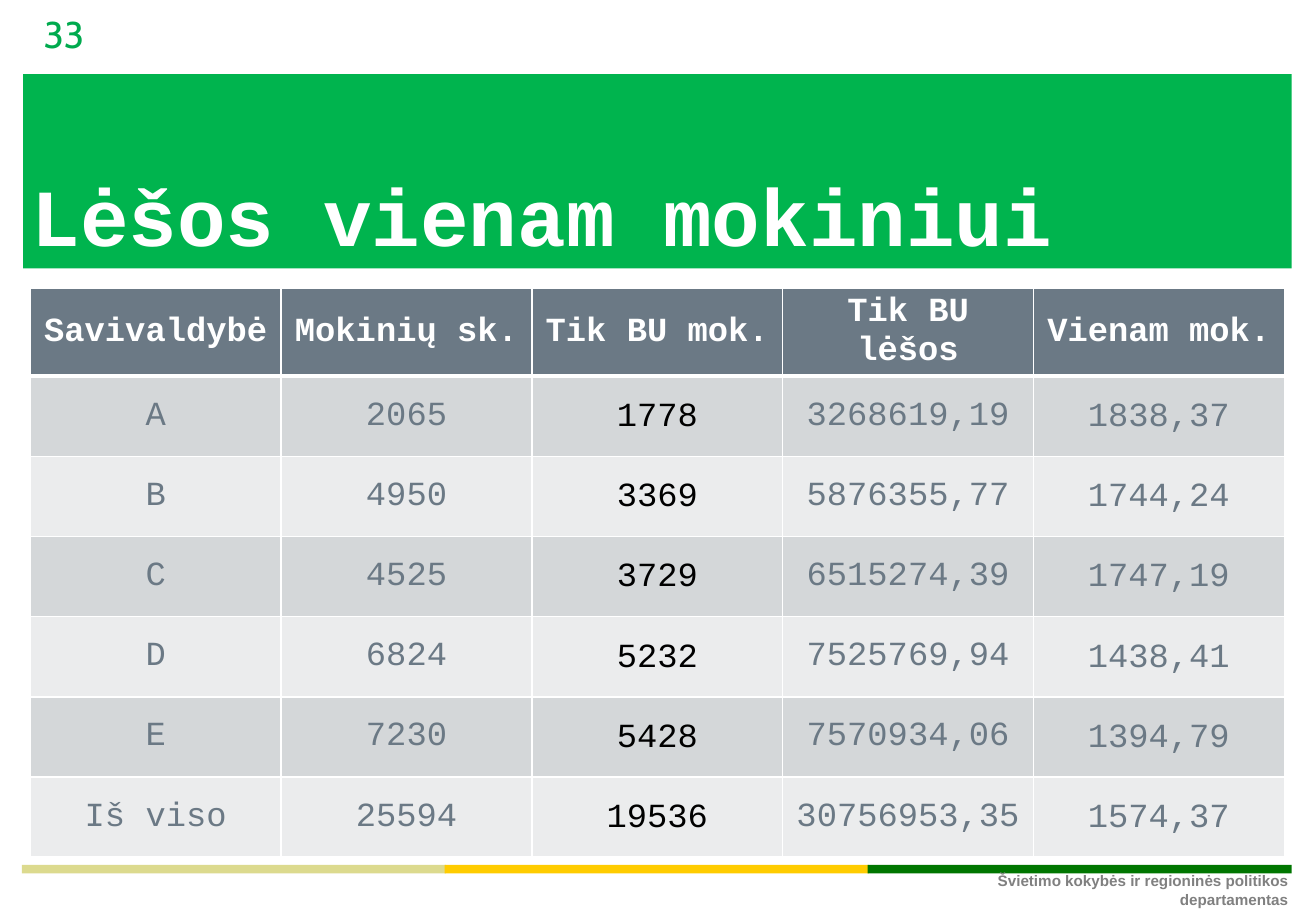
from dataclasses import dataclass

from lxml.etree import SubElement
from pptx import Presentation
from pptx.dml.color import RGBColor
from pptx.enum.shapes import MSO_SHAPE as Preset
from pptx.enum.text import MSO_ANCHOR as Anchor, PP_ALIGN as Align
from pptx.oxml.ns import qn
from pptx.slide import Slide
from pptx.table import _Cell as Cell
from pptx.text.text import _Paragraph as Paragraph
from pptx.util import Emu, Pt

EMU_PER_PX = 9144  # 100 px to the inch

COLORS = {
    "white": "FFFFFF", "black": "000000", "banner": "00B44E", "number": "00AA4E",
    "footer": "808080", "slate": "6B7985", "odd_row": "D4D7D9", "even_row": "EBECED",
    "sand": "DCDA8E", "yellow": "FFCC00", "dark_green": "007600",
}

ROWS = [
    ["Savivaldybė", "Mokinių sk.", "Tik BU mok.", "Tik BU lėšos", "Vienam mok."],
    ["A", "2065", "1778", "3268619,19", "1838,37"],
    ["B", "4950", "3369", "5876355,77", "1744,24"],
    ["C", "4525", "3729", "6515274,39", "1747,19"],
    ["D", "6824", "5232", "7525769,94", "1438,41"],
    ["E", "7230", "5428", "7570934,06", "1394,79"],
    ["Iš viso", "25594", "19536", "30756953,35", "1574,37"],
]
BU_PUPILS_COLUMN = 2
LOOSE_COLUMNS = (2, 4)
LOOSE_SPACING = 1.07


@dataclass(frozen=True)
class Box:
    left: int
    top: int
    width: int
    height: int

    def emu(self) -> tuple[Emu, Emu, Emu, Emu]:
        return px(self.left), px(self.top), px(self.width), px(self.height)


@dataclass(frozen=True)
class Bar:
    box: Box
    color: str


@dataclass(frozen=True)
class TextStyle:
    font: str
    size: int
    color: str
    bold: bool = False
    align: Align = Align.LEFT
    spacing: float = 1.0


@dataclass(frozen=True)
class Label:
    text: str
    box: Box
    style: TextStyle
    anchor: Anchor
    margins: tuple[int, int] = (7, 4)


STRIPE_COLORS = ("sand", "yellow", "dark_green")
BARS = [Bar(Box(19, 61, 1044, 160), "banner")] + [
    Bar(Box(18 + 348 * index, 712, 349, 7), color)
    for index, color in enumerate(STRIPE_COLORS)
]
LABELS = [
    Label("Švietimo kokybės ir regioninės politikos departamentas",
          Box(760, 712, 307, 22),
          TextStyle("Arial", 9, "footer", True, Align.RIGHT, LOOSE_SPACING), Anchor.TOP),
    Label("33", Box(29, 11, 70, 33), TextStyle("Cabin", 22, "number"), Anchor.MIDDLE),
    Label("Lėšos vienam mokiniui", Box(26, 64, 1031, 152),
          TextStyle("Courier New", 48, "white", True), Anchor.BOTTOM, (0, 0)),
]
TABLE_BOX = Box(25, 237, 1032, 462)


def px(length: int) -> Emu:
    return Emu(length * EMU_PER_PX)


def rgb(name: str) -> RGBColor:
    return RGBColor.from_string(COLORS[name])


def style_paragraph(paragraph: Paragraph, style: TextStyle) -> None:
    paragraph.alignment = style.align
    paragraph.line_spacing = style.spacing
    font = paragraph.font
    font.name, font.size, font.bold = style.font, Pt(style.size), style.bold
    font.color.rgb = rgb(style.color)


def draw_bar(slide: Slide, bar: Bar) -> None:
    shape = slide.shapes.add_shape(Preset.RECTANGLE, *bar.box.emu())
    shape.shadow.inherit = False
    shape.fill.solid()
    shape.fill.fore_color.rgb = rgb(bar.color)
    shape.line.fill.background()


def draw_label(slide: Slide, label: Label) -> None:
    frame = slide.shapes.add_textbox(*label.box.emu()).text_frame
    frame.word_wrap = True
    frame.vertical_anchor = label.anchor
    frame.margin_left = frame.margin_right = px(label.margins[0])
    frame.margin_top = frame.margin_bottom = px(label.margins[1])
    paragraph = frame.paragraphs[0]
    paragraph.text = label.text
    style_paragraph(paragraph, label.style)


def add_borders(cell: Cell, top: int, bottom: int) -> None:
    """Draw white borders, with widths in points; call before filling the cell."""
    properties = cell._tc.get_or_add_tcPr()
    for side, width in (("L", 1), ("R", 1), ("T", top), ("B", bottom)):
        line = SubElement(properties, qn(f"a:ln{side}"), w=str(Pt(width)))
        fill = SubElement(line, qn("a:solidFill"))
        SubElement(fill, qn("a:srgbClr"), val=COLORS["white"])


def cell_look(row: int, column: int) -> tuple[str, TextStyle]:
    """Return the fill colour and the text style of a cell."""
    if row == 0:
        return "slate", TextStyle("Courier New", 20, "white", True, Align.CENTER)
    fill = "odd_row" if row % 2 else "even_row"
    color = "black" if column == BU_PUPILS_COLUMN else "slate"
    spacing = LOOSE_SPACING if column in LOOSE_COLUMNS else 1.0
    return fill, TextStyle("Courier New", 20, color, False, Align.CENTER, spacing)


def draw_cell(cell: Cell, text: str, row: int, column: int) -> None:
    fill, style = cell_look(row, column)
    add_borders(cell, top=3 if row == 1 else 1, bottom=3 if row == 0 else 1)
    cell.fill.solid()
    cell.fill.fore_color.rgb = rgb(fill)
    cell.vertical_anchor = Anchor.MIDDLE
    cell.margin_top = cell.margin_bottom = px(3 if row == 0 else 0)
    if row > 0 and column > 0:
        cell.margin_left = cell.margin_right = px(7 if column in LOOSE_COLUMNS else 0)
    paragraph = cell.text_frame.paragraphs[0]
    paragraph.text = text
    style_paragraph(paragraph, style)


def draw_table(slide: Slide) -> None:
    frame = slide.shapes.add_table(len(ROWS), len(ROWS[0]), *TABLE_BOX.emu())
    table = frame.table
    table.horz_banding = False
    for row, texts in enumerate(ROWS):
        for column, text in enumerate(texts):
            draw_cell(table.cell(row, column), text, row, column)


def main() -> None:
    presentation = Presentation()
    presentation.slide_width, presentation.slide_height = px(1083), px(750)
    slide = presentation.slides.add_slide(presentation.slide_layouts[6])
    for bar in BARS:
        draw_bar(slide, bar)
    for label in LABELS:
        draw_label(slide, label)
    draw_table(slide)
    presentation.save("out.pptx")


if __name__ == "__main__":
    main()
